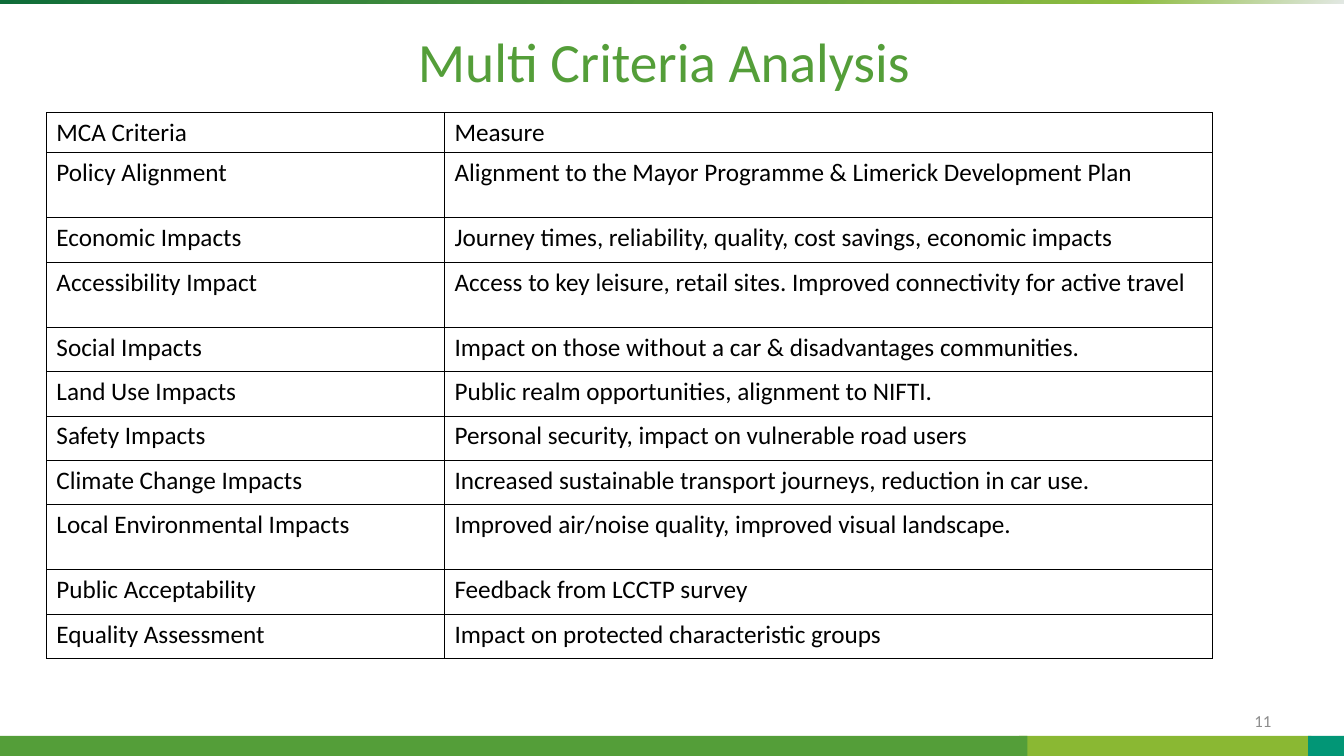
from dataclasses import dataclass

from lxml import etree
from pptx import Presentation
from pptx.dml.color import RGBColor
from pptx.enum.shapes import MSO_SHAPE
from pptx.enum.text import MSO_ANCHOR, PP_ALIGN
from pptx.oxml.ns import qn
from pptx.util import Inches, Pt

RECT = MSO_SHAPE.RECTANGLE
MIDDLE = MSO_ANCHOR.MIDDLE
LEFT, CENTER, RIGHT = PP_ALIGN.LEFT, PP_ALIGN.CENTER, PP_ALIGN.RIGHT


@dataclass(frozen=True)
class Theme:
    font: str = "Calibri"
    green: str = "549E39"
    lime: str = "8AB833"
    teal: str = "029676"
    gray: str = "8C8C8C"
    ink: str = "000000"
    fade: tuple = ((0, "0E6C39"), (84, "8EBC40"), (100, "E2E8E3"))
    title: float = 79.2
    body: float = 36
    note: float = 24
    rule: float = 1


def write(frame, text, size, color, font, align=LEFT):
    """Put one formatted line of text into a text frame."""
    frame.word_wrap = True
    par = frame.paragraphs[0]
    par.alignment = align
    run = par.add_run()
    run.text = text
    run.font.name = font
    run.font.size = Pt(size)
    run.font.color.rgb = RGBColor.from_string(color)


class Deck:
    """Theme and current slide; lengths are percentages of the slide size."""

    def __init__(self, theme, width, height):
        self.theme = theme
        self.prs = Presentation()
        self.prs.slide_width = Inches(width)
        self.prs.slide_height = Inches(height)
        self.slide = self.prs.slides.add_slide(self.prs.slide_layouts[6])

    def across(self, share):
        return round(self.prs.slide_width * share / 100)

    def down(self, share):
        return round(self.prs.slide_height * share / 100)

    def box(self, x, y, w, h):
        return self.across(x), self.down(y), self.across(w), self.down(h)

    def bar(self, *area, color=None):
        shape = self.slide.shapes.add_shape(RECT, *self.box(*area))
        shape.shadow.inherit = False
        shape.line.fill.background()
        if color:
            shape.fill.solid()
            shape.fill.fore_color.rgb = RGBColor.from_string(color)
        return shape

    def blend(self, *area, stops, angle):
        shape = self.bar(*area)
        shape.fill.gradient()
        grad = shape.fill._xPr.find(qn("a:gradFill"))
        marks = grad.find(qn("a:gsLst"))
        for old in list(marks):
            marks.remove(old)
        for place, color in stops:
            mark = etree.SubElement(marks, qn("a:gs"), pos=str(place * 1000))
            etree.SubElement(mark, qn("a:srgbClr"), val=color)
        grad.find(qn("a:lin")).set("ang", str(angle * 60000))

    def label(self, text, *area, size, color, align):
        frame = self.slide.shapes.add_textbox(*self.box(*area)).text_frame
        frame.vertical_anchor = MIDDLE
        write(frame, text, size, color, self.theme.font, align)

    def frame(self, cell):
        props = cell._tc.get_or_add_tcPr()
        for side in ("a:lnL", "a:lnR", "a:lnT", "a:lnB"):
            line = etree.SubElement(props, qn(side), w=str(Pt(self.theme.rule)))
            fill = etree.SubElement(line, qn("a:solidFill"))
            etree.SubElement(fill, qn("a:srgbClr"), val=self.theme.ink)
        cell.fill.background()

    def table(self, rows, x, y, cols, highs):
        area = self.box(x, y, sum(cols), sum(highs))
        grid = self.slide.shapes.add_table(len(rows), len(cols), *area).table
        grid.first_row = grid.horz_banding = False
        for col, wide in zip(grid.columns, cols):
            col.width = self.across(wide)
        for row, high, texts in zip(grid.rows, highs, rows):
            row.height = self.down(high)
            for cell, text in zip(row.cells, texts):
                cell.margin_left = cell.margin_right = Inches(0.2)
                cell.margin_top = cell.margin_bottom = Inches(0.1)
                write(cell.text_frame, text, self.theme.body,
                      self.theme.ink, self.theme.font)
                self.frame(cell)


HEAD, SHORT, TALL = 5.13, 5.87, 8.6
CRITERIA = [
    (HEAD, "MCA Criteria", "Measure"),
    (TALL, "Policy Alignment",
     "Alignment to the Mayor Programme & Limerick Development Plan"),
    (SHORT, "Economic Impacts",
     "Journey times, reliability, quality, cost savings, economic impacts"),
    (TALL, "Accessibility Impact",
     "Access to key leisure, retail sites. Improved connectivity for active travel"),
    (SHORT, "Social Impacts",
     "Impact on those without a car & disadvantages communities."),
    (SHORT, "Land Use Impacts", "Public realm opportunities, alignment to NIFTI."),
    (SHORT, "Safety Impacts", "Personal security, impact on vulnerable road users"),
    (SHORT, "Climate Change Impacts",
     "Increased sustainable transport journeys, reduction in car use."),
    (TALL, "Local Environmental Impacts",
     "Improved air/noise quality, improved visual landscape."),
    (SHORT, "Public Acceptability", "Feedback from LCCTP survey"),
    (SHORT, "Equality Assessment", "Impact on protected characteristic groups"),
]


def main():
    theme = Theme()
    deck = Deck(theme, 26.67, 15)

    # Top and bottom bands
    deck.blend(0, -0.4, 100, 0.87, stops=theme.fade, angle=45)
    for left, wide, color in ((75.82, 21.75, theme.lime),
                              (97.34, 2.66, theme.teal),
                              (0, 76.45, theme.green)):
        deck.bar(left, 97.33, wide, 2.67, color=color)

    # Title and page number
    deck.label("Multi Criteria Analysis ", 2.62, 3.27, 94.49, 9.33,
               size=theme.title, color=theme.green, align=CENTER)
    deck.label("11", 71.65, 92.67, 23.32, 5.33,
               size=theme.note, color=theme.gray, align=RIGHT)

    # Criteria table
    deck.table([row[1:] for row in CRITERIA], 3.45, 14.87,
               cols=(29.62, 57.14), highs=[row[0] for row in CRITERIA])

    deck.prs.save("out.pptx")


if __name__ == "__main__":
    main()
